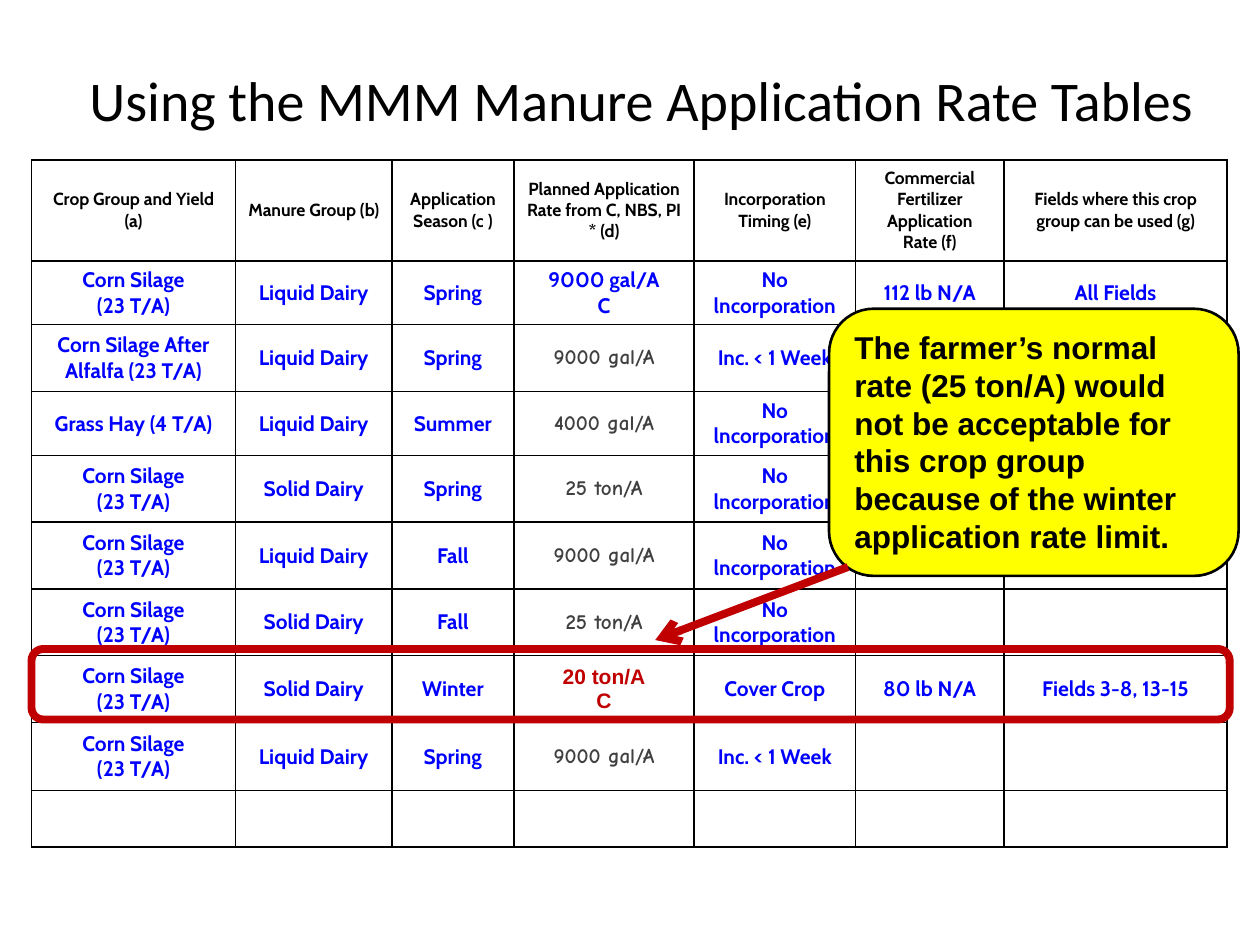
from dataclasses import dataclass, field
from typing import Any

import pptx
import pptx.dml.color
import pptx.enum.shapes
import pptx.enum.text
import pptx.oxml
import pptx.oxml.ns
import pptx.util


@dataclass(frozen=True)
class Style:
    font: str
    size: int
    color: str
    bold: bool = True


@dataclass(frozen=True)
class Theme:
    paper: str = "FFFFFF"
    ink: str = "000000"
    alert: str = "C00000"
    note: str = "FFFF00"
    thin: float = 1
    edge: float = 1.5
    thick: float = 4.5
    title: Style = Style("Calibri", 32, "000000", False)
    head: Style = Style("Cabin", 10, "000000")
    body: Style = Style("Cabin", 12, "0000FF")
    usual: Style = Style("Comic Neue", 12, "404040")
    limit: Style = Style("Arial", 12, "C00000")
    callout: Style = Style("Arial", 18, "000000")


@dataclass(frozen=True)
class Box:
    left: float
    top: float
    width: float
    height: float


@dataclass(frozen=True)
class Row:
    height: float
    cells: tuple[str, ...]
    rate: Style
    base: Style = field(default=Theme.body)


THEME = Theme()
WIDTH = pptx.util.Inches(10)
HEIGHT = pptx.util.Inches(7.5)
RATE = 3
COLUMNS = (16.2, 12.4, 9.7, 14.3, 12.8, 11.8, 17.7)
CORN = "Corn Silage\n(23 T/A)"
NONE = "No lncorporation"
WEEK = "Inc. < 1 Week"
LIQUID = "Liquid Dairy"
SOLID = "Solid Dairy"
ROWS = (
    Row(10.67, ("Crop Group and Yield (a)", "Manure Group (b)", "Application Season (c )",
                "Planned Application Rate from C, NBS, PI * (d)", "Incorporation Timing (e)",
                "Commercial Fertilizer Application Rate (f)",
                "Fields where this crop group can be used (g)"), THEME.head, THEME.head),
    Row(6, (CORN, LIQUID, "Spring", "9000 gal/A\nC", NONE, "112 lb N/A", "All Fields"), THEME.body),
    Row(7.07, ("Corn Silage After Alfalfa (23 T/A)", LIQUID, "Spring", "9000 gal/A", WEEK), THEME.usual),
    Row(6.67, ("Grass Hay (4 T/A)", LIQUID, "Summer", "4000 gal/A", NONE), THEME.usual),
    Row(7.07, (CORN, SOLID, "Spring", "25 ton/A", NONE), THEME.usual),
    Row(7.07, (CORN, LIQUID, "Fall", "9000 gal/A", NONE), THEME.usual),
    Row(7.07, (CORN, SOLID, "Fall", "25 ton/A", NONE), THEME.usual),
    Row(7.07, (CORN, SOLID, "Winter", "20 ton/A\nC", "Cover Crop", "80 lb N/A", "Fields 3-8, 13-15"),
        THEME.limit),
    Row(7.2, (CORN, LIQUID, "Spring", "9000 gal/A", WEEK), THEME.usual),
    Row(6, (), THEME.body),
)


def across(share: float) -> int:
    return round(WIDTH * share / 100)


def down(share: float) -> int:
    return round(HEIGHT * share / 100)


def frame(box: Box) -> tuple[int, int, int, int]:
    return across(box.left), down(box.top), across(box.width), down(box.height)


def tint(code: str) -> pptx.dml.color.RGBColor:
    return pptx.dml.color.RGBColor.from_string(code)


def write(text: Any, words: str, style: Style, align: Any) -> None:
    text.text = words
    for part in text.paragraphs:
        part.alignment = align
        for font in [part.font] + [run.font for run in part.runs]:
            font.name = style.font
            font.size = pptx.util.Pt(style.size)
            font.bold = style.bold
            font.color.rgb = tint(style.color)


def border(cell: Any) -> None:
    space = pptx.oxml.ns.nsdecls("a")
    width = pptx.util.Pt(THEME.thin)
    for side in "LRTB":
        cell._tc.get_or_add_tcPr().append(pptx.oxml.parse_xml(
            f'<a:ln{side} {space} w="{width}"><a:solidFill>'
            f'<a:srgbClr val="{THEME.ink}"/></a:solidFill></a:ln{side}>'))


def grid(slide: Any, left: float, top: float) -> None:
    box = Box(left, top, sum(COLUMNS), sum(row.height for row in ROWS))
    table = slide.shapes.add_table(len(ROWS), len(COLUMNS), *frame(box)).table
    for column, share in zip(table.columns, COLUMNS):
        column.width = across(share)
    for line, row in zip(table.rows, ROWS):
        line.height = down(row.height)
        words = row.cells + ("",) * (len(COLUMNS) - len(row.cells))
        for index, (cell, value) in enumerate(zip(line.cells, words)):
            border(cell)
            cell.fill.solid()
            cell.fill.fore_color.rgb = tint(THEME.paper)
            cell.vertical_anchor = pptx.enum.text.MSO_ANCHOR.MIDDLE
            style = row.rate if index == RATE else row.base
            write(cell.text_frame, value, style, pptx.enum.text.PP_ALIGN.CENTER)


def title(slide: Any, box: Box, words: str) -> None:
    text = slide.shapes.add_textbox(*frame(box)).text_frame
    text.word_wrap = True
    text.margin_left = text.margin_right = 0
    text.vertical_anchor = pptx.enum.text.MSO_ANCHOR.MIDDLE
    write(text, words, THEME.title, pptx.enum.text.PP_ALIGN.LEFT)


def stroke(line: Any, color: str, width: float) -> None:
    line.color.rgb = tint(color)
    line.width = pptx.util.Pt(width)


def rounded(slide: Any, box: Box, color: str, width: float) -> Any:
    kind = pptx.enum.shapes.MSO_SHAPE.ROUNDED_RECTANGLE
    shape = slide.shapes.add_shape(kind, *frame(box))
    shape.shadow.inherit = False
    shape.fill.background()
    stroke(shape.line, color, width)
    return shape


def callout(slide: Any, box: Box, words: str) -> None:
    shape = rounded(slide, box, THEME.ink, THEME.edge)
    shape.fill.solid()
    shape.fill.fore_color.rgb = tint(THEME.note)
    text = shape.text_frame
    text.word_wrap = True
    text.vertical_anchor = pptx.enum.text.MSO_ANCHOR.TOP
    write(text, words, THEME.callout, pptx.enum.text.PP_ALIGN.LEFT)
    text.auto_size = pptx.enum.text.MSO_AUTO_SIZE.SHAPE_TO_FIT_TEXT


def arrow(slide: Any, start: tuple[float, float], end: tuple[float, float]) -> None:
    kind = pptx.enum.shapes.MSO_CONNECTOR.STRAIGHT
    link = slide.shapes.add_connector(
        kind, across(start[0]), down(start[1]), across(end[0]), down(end[1]))
    stroke(link.line, THEME.alert, THEME.thick)
    space = pptx.oxml.ns.nsdecls("a")
    link.line._get_or_add_ln().append(pptx.oxml.parse_xml(f'<a:tailEnd {space} type="arrow"/>'))
    link._element.spPr.append(pptx.oxml.parse_xml(f"<a:effectLst {space}/>"))


def main() -> None:
    deck = pptx.Presentation()
    deck.slide_width, deck.slide_height = WIDTH, HEIGHT
    slide = deck.slides.add_slide(deck.slide_layouts[6])
    grid(slide, 2.5, 16.93)
    title(slide, Box(7.1, 5.2, 89.1, 10.67), "Using the MMM Manure Application Rate Tables")
    rounded(slide, Box(2.5, 68.67, 95.1, 7.47), THEME.alert, THEME.thick)
    callout(slide, Box(65.8, 32.67, 32.5, 28.27),
            "The farmer’s normal rate (25 ton/A) would not be acceptable for this crop group "
            "because of the winter application rate limit.")
    arrow(slide, (67.3, 60), (52, 67.73))
    deck.save("out.pptx")


if __name__ == "__main__":
    main()
